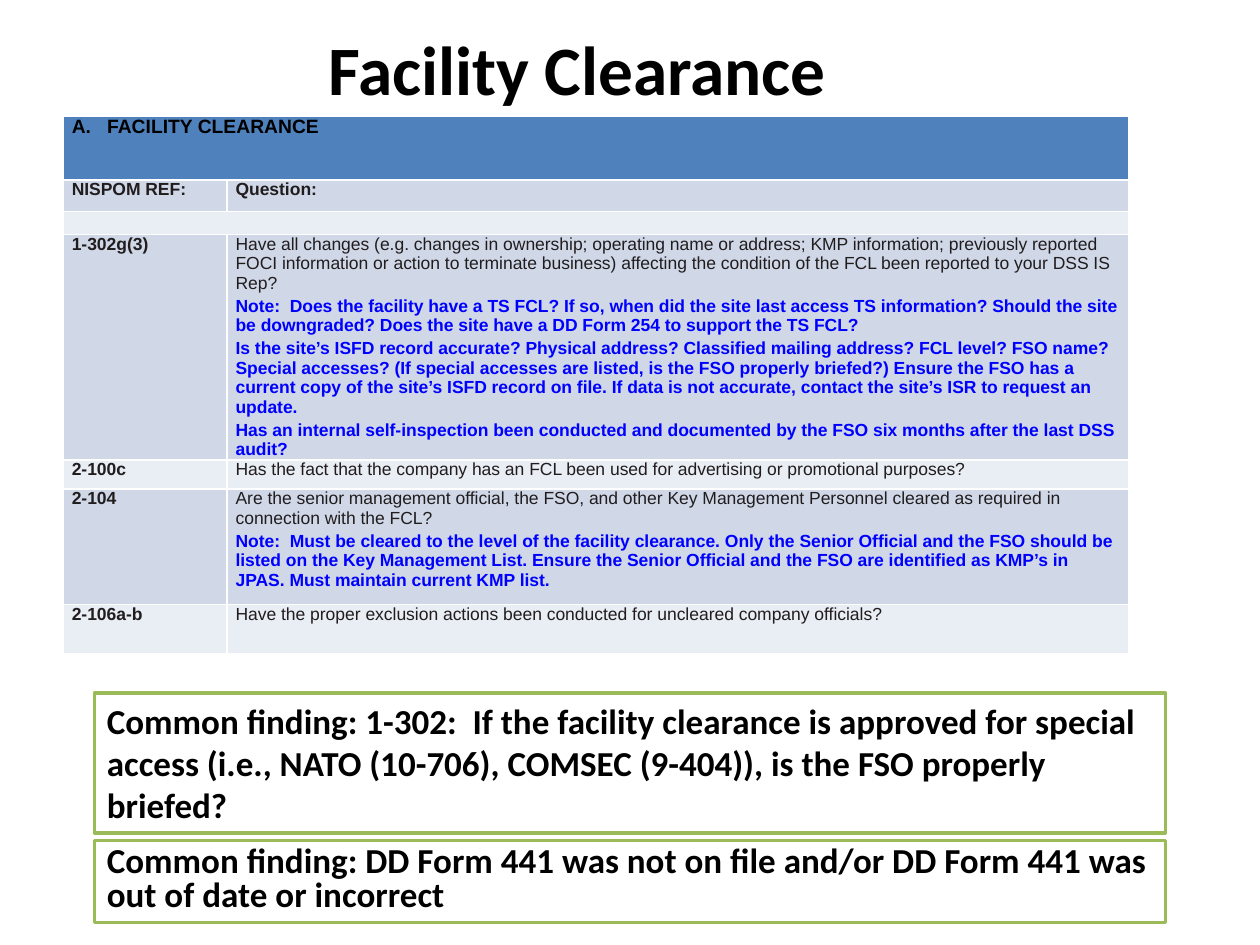
from pptx import Presentation
from pptx.dml.color import RGBColor
from pptx.enum import shapes, text
from pptx.util import Inches, Pt

COLORS = {
    "header": "4F81BD", "band_dark": "D0D8E8", "band_light": "E9EDF4",
    "ink": "211D1E", "note": "0000FF", "black": "000000",
    "white": "FFFFFF", "green": "9BBB59",
}


def color(name):
    return RGBColor.from_string(COLORS[name])


def style(p, face, size, ink, bold):
    p.font.name, p.font.size, p.font.bold = face, Pt(size), bold
    p.font.color.rgb = color(ink)


prs = Presentation()
prs.slide_width, prs.slide_height = Inches(10), Inches(7.5)
s = prs.slides.add_slide(prs.slide_layouts[5])

# Each row: height, reference, question, blue notes
rows = [
    (0.51, "A.   FACILITY CLEARANCE", "", []),
    (0.25, "NISPOM REF:", "Question:", []),
    (0.18, "", "", []),
    (1.79, "1-302g(3)",
     "Have all changes (e.g. changes in ownership; operating name or address; KMP "
     "information; previously reported FOCI information or action to terminate business) "
     "affecting the condition of the FCL been reported to your DSS IS Rep?",
     ["Note:  Does the facility have a TS FCL? If so, when did the site last access TS "
      "information? Should the site be downgraded? Does the site have a DD Form 254 to "
      "support the TS FCL?",
      "Is the site’s ISFD record accurate? Physical address? Classified mailing address? "
      "FCL level? FSO name? Special accesses? (If special accesses are listed, is the FSO "
      "properly briefed?) Ensure the FSO has a current copy of the site’s ISFD record on "
      "file. If data is not accurate, contact the site’s ISR to request an update.",
      "Has an internal self-inspection been conducted and documented by the FSO six months "
      "after the last DSS audit?"]),
    (0.23, "2-100c",
     "Has the fact that the company has an FCL been used for advertising or promotional "
     "purposes?", []),
    (0.92, "2-104",
     "Are the senior management official, the FSO, and other Key Management Personnel "
     "cleared as required in connection with the FCL?",
     ["Note:  Must be cleared to the level of the facility clearance. Only the Senior "
      "Official and the FSO should be listed on the Key Management List. Ensure the Senior "
      "Official and the FSO are identified as KMP’s in JPAS. Must maintain current KMP list."]),
    (0.39, "2-106a-b",
     "Have the proper exclusion actions been conducted for uncleared company officials?", []),
]

table = s.shapes.add_table(len(rows), 2, Inches(0.5), Inches(0.92), Inches(8.46),
                           Inches(sum(row[0] for row in rows))).table
for column, width in zip(table.columns, (1.3, 7.16)):
    column.width = Inches(width)

for i, (height, ref, question, notes) in enumerate(rows):
    table.rows[i].height = Inches(height)
    fill = "header" if i == 0 else "band_dark" if i % 2 else "band_light"
    for j, paragraphs in enumerate(([ref], [question, *notes])):
        cell = table.cell(i, j)
        cell.fill.solid()
        cell.fill.fore_color.rgb = color(fill)
        cell.margin_left = cell.margin_right = Inches(0.07)
        cell.margin_top = cell.margin_bottom = 0
        tf = cell.text_frame
        tf.text = "\n".join(paragraphs)
        for k, p in enumerate(tf.paragraphs):
            if i == 0:
                style(p, "Arial", 11, "black", True)
                p.space_after = Pt(5)
                continue
            style(p, "Arial", 10, "note" if k else "ink", j == 0 or i == 1 or k > 0)
            if paragraphs[k]:
                p.space_before = p.space_after = Pt(1)
            else:
                p._p.get_or_add_endParaRPr().set("sz", "1000")
    if not question:
        table.cell(i, 0).merge(table.cell(i, 1))

title = s.shapes.title
title.left, title.top = Inches(0.58), Inches(0.25)
title.width, title.height = Inches(8), Inches(0.58)
tf = title.text_frame
tf.text = "Facility Clearance"
tf.vertical_anchor = text.MSO_ANCHOR.MIDDLE
style(tf.paragraphs[0], "Calibri", 39.6, "black", True)
tf.paragraphs[0].alignment = text.PP_ALIGN.CENTER

findings = [
    (5.5, 1.11, 1.0,
     "Common finding: 1-302:  If the facility clearance is approved for special access "
     "(i.e., NATO (10-706), COMSEC (9-404)), is the FSO properly briefed?"),
    (6.67, 0.65, 0.8,
     "Common finding: DD Form 441 was not on file and/or DD Form 441 was out of date or "
     "incorrect"),
]
for top, height, spacing, finding in findings:
    sp = s.shapes.add_shape(shapes.MSO_SHAPE.RECTANGLE, Inches(0.75), Inches(top),
                            Inches(8.5), Inches(height))
    sp.shadow.inherit = False
    sp.fill.solid()
    sp.fill.fore_color.rgb = color("white")
    sp.line.color.rgb = color("green")
    sp.line.width = Pt(2)
    tf = sp.text_frame
    tf.word_wrap = True
    tf.vertical_anchor = text.MSO_ANCHOR.TOP
    tf.text = finding
    p = tf.paragraphs[0]
    style(p, "Calibri", 20, "black", True)
    p.alignment = text.PP_ALIGN.LEFT
    p.line_spacing = spacing

prs.save("out.pptx")
